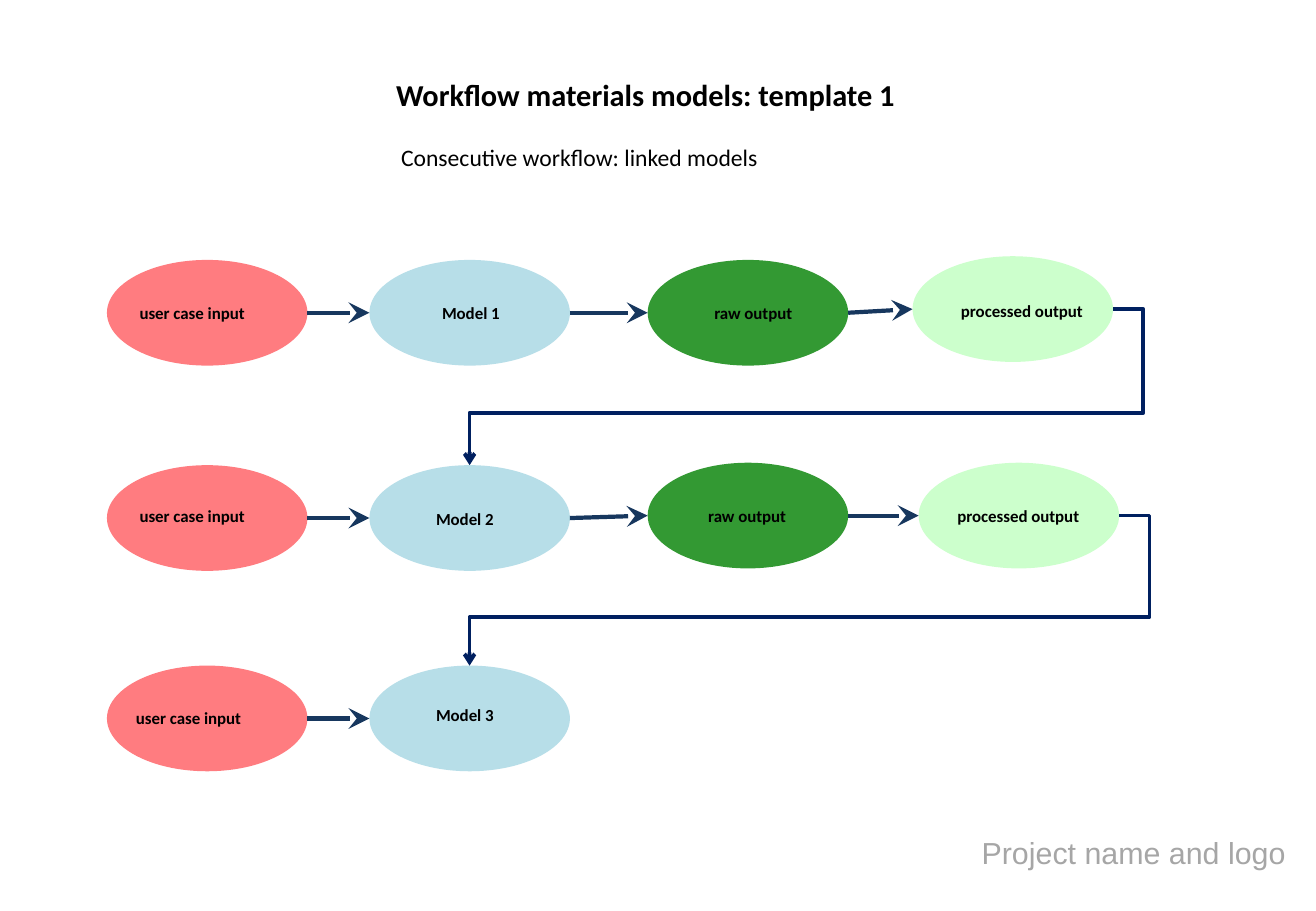
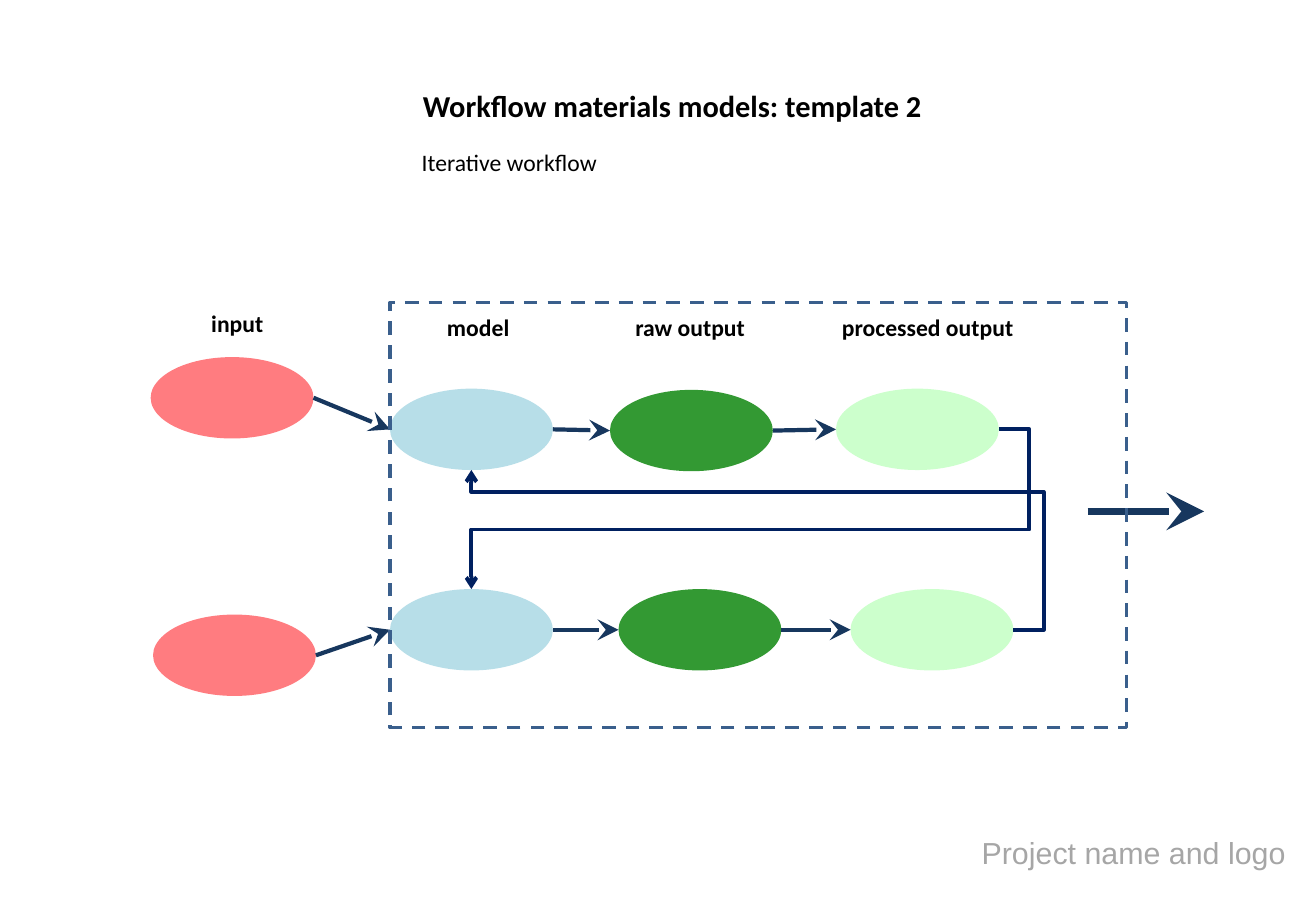
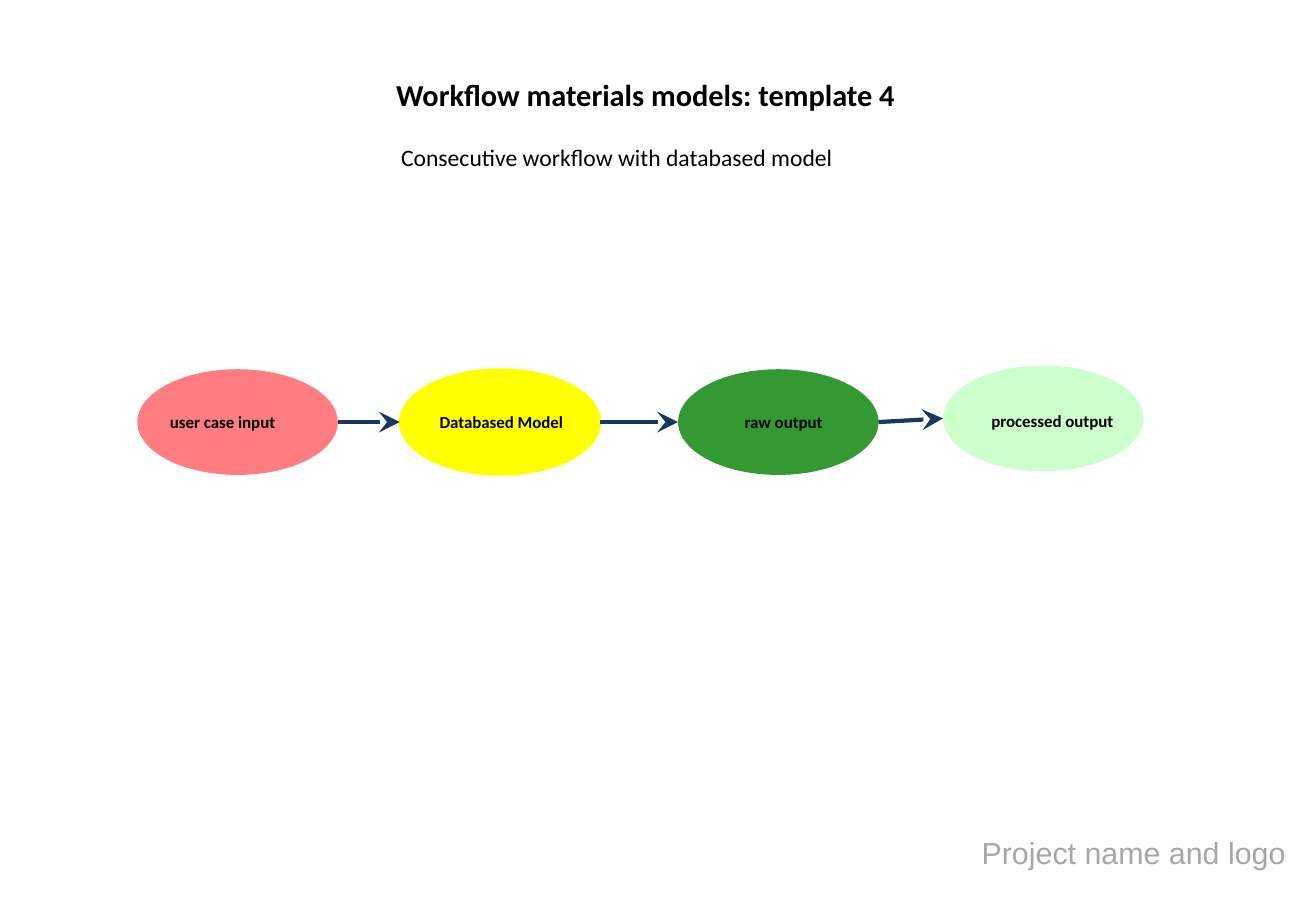
from itertools import pairwise

from lxml.etree import SubElement
from pptx import Presentation
from pptx.dml.color import RGBColor
from pptx.enum.dml import MSO_LINE
from pptx.enum.shapes import MSO_CONNECTOR, MSO_SHAPE
from pptx.enum.text import MSO_ANCHOR, MSO_AUTO_SIZE, PP_ALIGN
from pptx.oxml.ns import qn
from pptx.util import Inches, Pt

BLACK = RGBColor(0x00, 0x00, 0x00)
GRAY = RGBColor(0xA6, 0xA6, 0xA6)
INPUT = RGBColor(0xFF, 0x7C, 0x80)
MODEL = RGBColor(0xB7, 0xDE, 0xE8)
DATABASED = RGBColor(0xFF, 0xFF, 0x00)
RAW = RGBColor(0x33, 0x99, 0x33)
PROCESSED = RGBColor(0xCC, 0xFF, 0xCC)
ARROW = RGBColor(0x17, 0x37, 0x5E)
FEEDBACK = RGBColor(0x00, 0x20, 0x60)
FRAME = RGBColor(0x3A, 0x5F, 0x8C)

LARGE = (1.65, 0.87)
SMALL = (1.34, 0.67)
OVERHANG = Inches(0.25)
ELLIPSE_LEFT, ELLIPSE_RIGHT = 2, 6  # connection sites


def write(sp, text, size, bold=False, color=BLACK, font="Calibri", align=PP_ALIGN.LEFT):
    tf = sp.text_frame
    tf.word_wrap = True
    tf.auto_size = MSO_AUTO_SIZE.NONE
    tf.vertical_anchor = MSO_ANCHOR.TOP
    p = tf.paragraphs[0]
    p.alignment = align
    p.space_before = Pt(0)
    r = p.add_run()
    r.text = text
    r.font.name = font
    r.font.size = Pt(size)
    r.font.bold = bold
    r.font.color.rgb = color


def add_text(s, left, top, width, height, text, size, **style):
    sp = s.shapes.add_textbox(Inches(left), Inches(top), Inches(width), Inches(height))
    write(sp, text, size, **style)


def place(sp, left, top, width, height):
    sp.left, sp.top = Inches(left), Inches(top)
    sp.width, sp.height = Inches(width), Inches(height)


def add_slide(prs, title, subtitle, title_at=(3.16, 0.58), subtitle_at=(3.2, 1.13)):
    """Add a slide with title, subtitle and the shared footer."""
    s = prs.slides.add_slide(prs.slide_layouts[0])
    place(s.shapes.title, *title_at, 4.6, 0.4)
    write(s.shapes.title, title, 18, bold=True)
    sub = s.placeholders[1]
    place(sub, *subtitle_at, 4.2, 0.34)
    write(sub, subtitle, 14)
    add_text(s, 7.98, 6.82, 2.85, 0.4, "Project name and logo", 18, color=GRAY, font="Arial")
    return s


def add_node(s, size, fill, left, top):
    sp = s.shapes.add_shape(MSO_SHAPE.OVAL, Inches(left), Inches(top),
                            Inches(size[0]), Inches(size[1]))
    sp.shadow.inherit = False
    sp.fill.solid()
    sp.fill.fore_color.rgb = fill
    sp.line.fill.background()
    return sp


def add_line(s, kind, start, end, color, width, head, head_size):
    c = s.shapes.add_connector(kind, *(round(v) for v in (*start, *end)))
    c.line.color.rgb = color
    c.line.width = Pt(width)
    sp_pr = c.element.spPr
    SubElement(sp_pr.find(qn("a:ln")), qn("a:tailEnd"), type=head, w=head_size, len=head_size)
    SubElement(sp_pr, qn("a:effectLst"))
    return c


def add_arrow(s, start, end, width=2.5):
    return add_line(s, MSO_CONNECTOR.STRAIGHT, start, end, ARROW, width, "stealth", "lg")


def right_of(sp):
    return sp.left + sp.width, sp.top + sp.height / 2


def link(s, source, target):
    """Join two ellipses with an arrow that stays attached to both."""
    c = add_arrow(s, right_of(source), (target.left, target.top + target.height / 2))
    props = c.element.find(".//" + qn("p:cNvCxnSpPr"))
    for tag, sp, site in (("a:stCxn", source, ELLIPSE_RIGHT), ("a:endCxn", target, ELLIPSE_LEFT)):
        SubElement(props, qn(tag), id=str(sp.shape_id), idx=str(site))


def add_chain(s, size, *nodes):
    """Draw (fill, left, top) ellipses and link each to the next."""
    chain = [add_node(s, size, *node) for node in nodes]
    for source, target in pairwise(chain):
        link(s, source, target)
    return chain


def add_feedback(s, source, target, lane):
    """Lead from the right of source along height lane to the near edge of target."""
    x1, y1 = right_of(source)
    x2 = target.left + target.width / 2
    y2 = target.top if target.top > source.top else target.top + target.height
    c = add_line(s, MSO_CONNECTOR.ELBOW, (x1, y1), (x2, y2), FEEDBACK, 2.25, "arrow", "med")
    geom = c.element.spPr.find(qn("a:prstGeom"))
    geom.set("prst", "bentConnector4")
    av = geom.find(qn("a:avLst"))
    if av is None:
        av = SubElement(geom, qn("a:avLst"))
    for name, share in (("adj1", -OVERHANG / (x1 - x2)),
                        ("adj2", (Inches(lane) - y1) / (y2 - y1))):
        SubElement(av, qn("a:gd"), name=name, fmla=f"val {round(share * 100000)}")


def add_labels(s, *labels):
    for left, top, text in labels:
        add_text(s, left, top, 1.5, 0.27, text, 10, bold=True)


def add_full_row(s, left, top, model, model_fill):
    """Labelled chain from input to processed output."""
    chain = add_chain(s, LARGE, (INPUT, left, top), (model_fill, left + 2.16, top),
                      (RAW, left + 4.45, top), (PROCESSED, left + 6.63, top - 0.03))
    y = top + 0.3
    add_labels(s, (left + 0.17, y, "user case input"), (left + 4.9, y, "raw output"),
               (left + 6.93, y - 0.01, "processed output"))
    add_text(s, left + 2.25, y, 1.49, 0.27, model, 10, bold=True, align=PP_ALIGN.CENTER)
    return chain


def linked_models(prs):
    s = add_slide(prs, "Workflow materials models: template 1",
                  "Consecutive workflow: linked models")
    first = add_full_row(s, 0.88, 2.14, "Model 1", MODEL)
    second = add_chain(s, LARGE, (INPUT, 0.88, 3.83), (MODEL, 3.04, 3.83),
                       (RAW, 5.33, 3.81), (PROCESSED, 7.56, 3.81))
    third = add_chain(s, LARGE, (INPUT, 0.88, 5.48), (MODEL, 3.04, 5.48))
    add_labels(s, (1.05, 4.11, "user case input"), (3.49, 4.14, "Model 2"),
               (5.73, 4.11, "raw output"), (7.78, 4.11, "processed output"),
               (1.02, 5.78, "user case input"), (3.49, 5.75, "Model 3"))
    add_feedback(s, first[-1], second[1], 3.4)
    add_feedback(s, second[-1], third[1], 5.08)


def iterative(prs):
    s = add_slide(prs, "Workflow materials models: template 2", "Iterative workflow",
                  (3.38, 0.67), (3.37, 1.17))
    for left, top, text in ((1.64, 2.49, "input"), (3.58, 2.53, "model"),
                            (5.13, 2.53, "raw output"), (6.83, 2.53, "processed output")):
        add_text(s, left, top, 1.8, 0.34, text, 14, bold=True)
    upper = add_chain(s, SMALL, (INPUT, 1.24, 2.94), (MODEL, 3.21, 3.2),
                      (RAW, 5.02, 3.21), (PROCESSED, 6.88, 3.2))
    lower = add_chain(s, SMALL, (INPUT, 1.26, 5.06), (MODEL, 3.21, 4.85),
                      (RAW, 5.09, 4.85), (PROCESSED, 7, 4.85))
    add_arrow(s, (Inches(8.95), Inches(4.21)), (Inches(9.91), Inches(4.21)), 4.5)
    frame = s.shapes.add_shape(MSO_SHAPE.RECTANGLE, Inches(3.21), Inches(2.49),
                               Inches(6.06), Inches(3.5))
    frame.shadow.inherit = False
    frame.fill.background()
    frame.line.color.rgb = FRAME
    frame.line.width = Pt(2)
    frame.line.dash_style = MSO_LINE.DASH
    add_feedback(s, upper[-1], lower[1], 4.36)
    add_feedback(s, lower[-1], upper[1], 4.05)


def databased_model(prs):
    s = add_slide(prs, "Workflow materials models: template 4",
                  "Consecutive workflow with databased model")
    model = add_full_row(s, 1.13, 3.04, "Databased Model", DATABASED)[1]
    model.line.color.rgb = DATABASED
    model.line.width = Pt(1)


def main():
    prs = Presentation()
    prs.slide_width, prs.slide_height = Inches(10.83), Inches(7.5)
    linked_models(prs)
    iterative(prs)
    databased_model(prs)
    prs.save("out.pptx")


if __name__ == "__main__":
    main()
